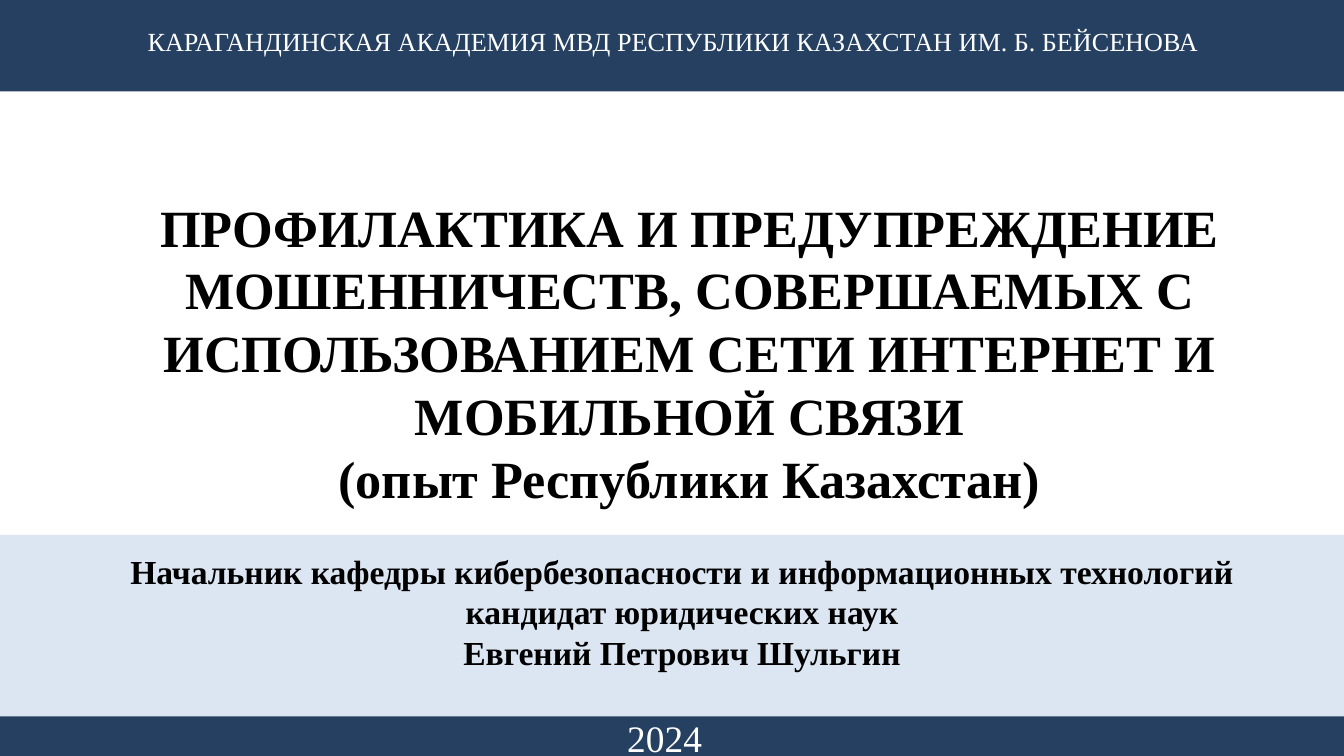
"""Build the title slide of a talk on preventing internet and mobile fraud."""
from pptx import Presentation
from pptx.dml.color import RGBColor
from pptx.enum.shapes import MSO_SHAPE
from pptx.enum.text import MSO_ANCHOR, MSO_AUTO_SIZE, PP_ALIGN
from pptx.util import Inches, Pt

RECTANGLE = MSO_SHAPE.RECTANGLE
TOP = MSO_ANCHOR.TOP
NO_AUTOFIT = MSO_AUTO_SIZE.NONE
CENTER = PP_ALIGN.CENTER

FONT = "Times New Roman"
COLORS = {"navy": "254061", "pale": "DCE6F2", "white": "FFFFFF", "black": "000000"}
TITLE_LAYOUT = 5
WIDTH = 10
HEIGHT = WIDTH * 9 / 16

TITLE = [
    "ПРОФИЛАКТИКА И ПРЕДУПРЕЖДЕНИЕ МОШЕННИЧЕСТВ, СОВЕРШАЕМЫХ С "
    "ИСПОЛЬЗОВАНИЕМ СЕТИ ИНТЕРНЕТ И МОБИЛЬНОЙ СВЯЗИ",
    "(опыт Республики Казахстан)",
]
AUTHOR = [
    "Начальник кафедры кибербезопасности и информационных технологий",
    "кандидат юридических наук",
    "Евгений Петрович Шульгин",
]
ACADEMY = ["КАРАГАНДИНСКАЯ АКАДЕМИЯ МВД РЕСПУБЛИКИ КАЗАХСТАН ИМ. Б. БЕЙСЕНОВА"]


def color(name):
    return RGBColor.from_string(COLORS[name])


def add_band(slide, fill, *box):
    shape = slide.shapes.add_shape(RECTANGLE, *map(Inches, box))
    shape.shadow.inherit = False
    shape.fill.solid()
    shape.fill.fore_color.rgb = color(fill)
    shape.line.fill.background()
    return shape


def add_text_box(slide, *box):
    return slide.shapes.add_textbox(*map(Inches, box))


def write(shape, lines, size, ink, bold=False, top_inset=0.05):
    frame = shape.text_frame
    frame.text = "\n".join(lines)
    frame_format = {
        "word_wrap": True,
        "auto_size": NO_AUTOFIT,
        "vertical_anchor": TOP,
        "margin_top": Inches(top_inset),
    }
    for name, value in frame_format.items():
        setattr(frame, name, value)
    for paragraph in frame.paragraphs:
        paragraph.alignment = CENTER
        for run in paragraph.runs:
            for name, value in {"name": FONT, "size": Pt(size), "bold": bold}.items():
                setattr(run.font, name, value)
            run.font.color.rgb = color(ink)


def write_title(slide, *box):
    title = slide.shapes.title
    for name, value in zip(("left", "top", "width", "height"), box):
        setattr(title, name, Inches(value))
    write(title, TITLE, 28, "black", bold=True, top_inset=0.28)


def main():
    presentation = Presentation()
    presentation.slide_width = Inches(WIDTH)
    presentation.slide_height = Inches(HEIGHT)
    slide = presentation.slides.add_slide(presentation.slide_layouts[TITLE_LAYOUT])

    add_band(slide, "navy", 0, 5.3, WIDTH, 0.33)
    add_band(slide, "navy", 0, 0, WIDTH, 0.68)
    write(add_text_box(slide, 0.75, 0.14, 8.52, 0.34), ACADEMY, 14, "white")
    write_title(slide, 0.26, 1.17, 9.74, 2.69)
    add_band(slide, "pale", 0, 3.98, WIDTH, 1.35)
    year = add_text_box(slide, 3.44, 5.19, 3.01, 0.52)
    write(year, ["2024"], 20, "white", top_inset=0.13)
    author = add_band(slide, "pale", 0.7, 4.05, 8.75, 1.01)
    write(author, AUTHOR, 18, "black", bold=True)

    presentation.save("out.pptx")


if __name__ == "__main__":
    main()
